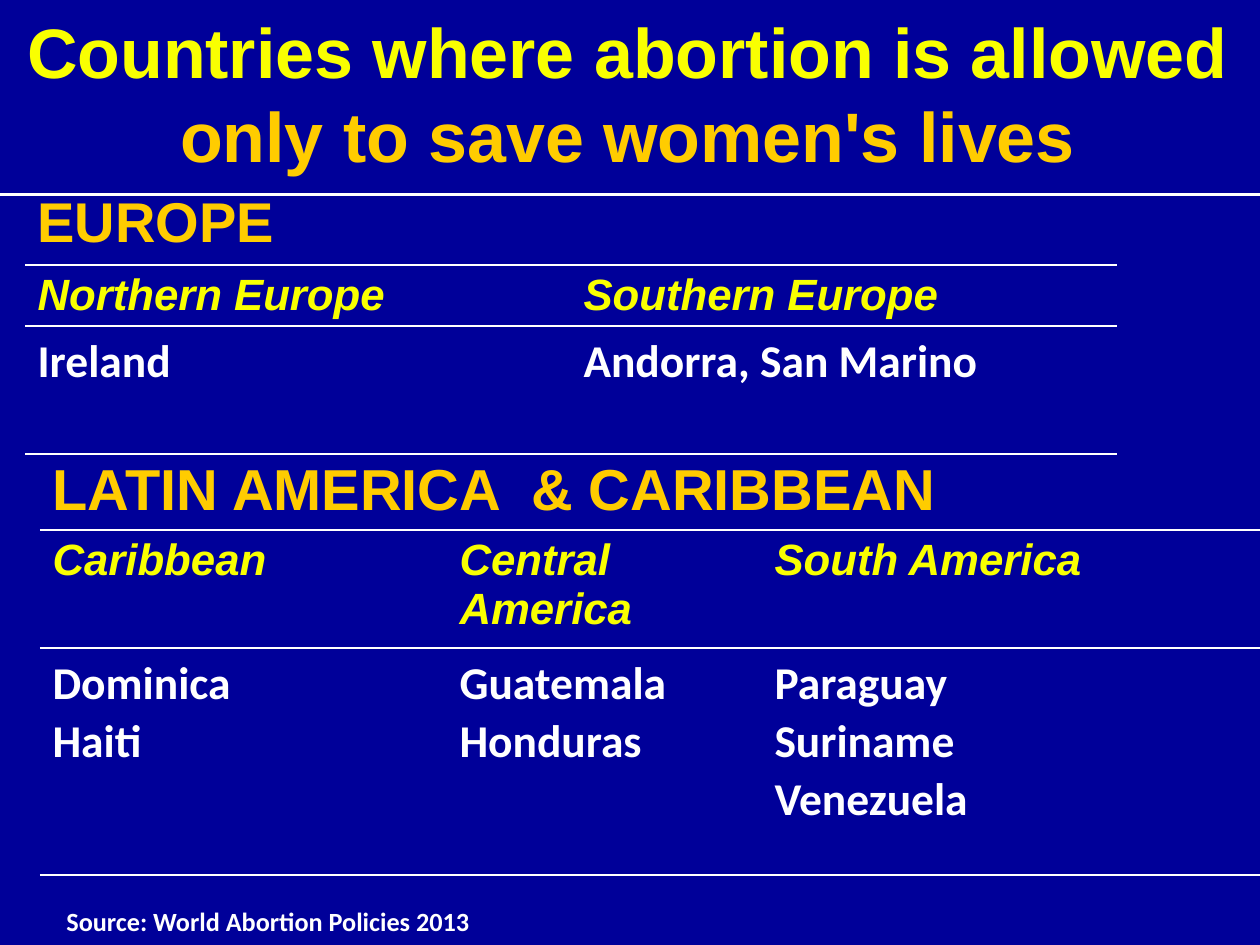
from dataclasses import dataclass

from lxml import etree
from pptx import Presentation
from pptx.dml.color import RGBColor
from pptx.enum.shapes import MSO_CONNECTOR
from pptx.enum.text import PP_ALIGN
from pptx.oxml.ns import qn
from pptx.util import Emu, Pt

PX = 914400 // 126
CENTER = PP_ALIGN.CENTER
STRAIGHT = MSO_CONNECTOR.STRAIGHT


@dataclass(frozen=True)
class Theme:
    navy: str = "000099"
    white: str = "FFFFFF"
    yellow: str = "F9FF01"
    gold: str = "FFCC00"
    heading_font: str = "Arial"
    body_font: str = "Calibri"
    title_size: int = 40
    region_size: int = 25
    country_size: int = 26
    source_size: int = 15
    country_leading: int = 33
    title_leading: int = 48
    border: float = 1.5
    rule: float = 1.75


THEME = Theme()
TITLE = [("Countries where abortion is allowed ", THEME.yellow),
         ("only to save women's lives", THEME.gold)]
SOURCE = "Source: World Abortion Policies 2013"
CONTINENTS = [
    {"name": "LATIN AMERICA  & CARIBBEAN", "size": 33,
     "left": 40, "top": 452, "columns": [407, 315, 498], "rows": [78, 118, 227],
     "regions": {"Caribbean": ["Dominica", "Haiti"],
                 "Central America": ["Guatemala", "Honduras"],
                 "South America": ["Paraguay", "Suriname", "Venezuela"]}},
    {"name": "EUROPE", "size": 32,
     "left": 25, "top": 185, "columns": [546, 546], "rows": [80, 61, 128],
     "regions": {"Northern Europe": ["Ireland"],
                 "Southern Europe": ["Andorra, San Marino"]}},
]


def px(*lengths):
    return [Emu(length * PX) for length in lengths]


def style(font, name, size, color, italic=False):
    font.name, font.size = name, Pt(size)
    font.bold, font.italic = True, italic
    font.color.rgb = RGBColor.from_string(color)


def set_borders(cell, ruled_sides):
    """Rule the named sides of a cell and clear the others."""
    properties = cell._tc.get_or_add_tcPr()
    for index, side in enumerate("LRTB"):
        line = etree.Element(qn(f"a:ln{side}"), w=str(Pt(THEME.border)))
        if side in ruled_sides:
            fill = etree.SubElement(line, qn("a:solidFill"))
            etree.SubElement(fill, qn("a:srgbClr"), val=THEME.white)
        else:
            etree.SubElement(line, qn("a:noFill"))
        properties.insert(index, line)


def fill_cell(cell, lines, font, leading=None):
    cell.text = "\n".join(lines)
    for para in cell.text_frame.paragraphs:
        style(para.font, *font)
        if leading:
            para.line_spacing = Pt(leading)


def add_continent(page, continent):
    columns, rows = continent["columns"], continent["rows"]
    frame = page.shapes.add_table(
        len(rows), len(columns),
        *px(continent["left"], continent["top"], sum(columns), sum(rows)))
    table = frame.table
    table.first_row = table.horz_banding = False
    for column, width in zip(table.columns, columns):
        column.width = Emu(width * PX)
    for index, (row, height) in enumerate(zip(table.rows, rows)):
        row.height = Emu(height * PX)
        for cell in row.cells:
            cell.fill.background()
            cell.margin_bottom = 0
            set_borders(cell, "TB" if index else "B")

    header = table.cell(0, 0)
    header.merge(table.cell(0, len(columns) - 1))
    fill_cell(header, [continent["name"]],
              (THEME.heading_font, continent["size"], THEME.gold))
    for index, (region, countries) in enumerate(continent["regions"].items()):
        fill_cell(table.cell(1, index), [region],
                  (THEME.heading_font, THEME.region_size, THEME.yellow, True))
        fill_cell(table.cell(2, index), countries,
                  (THEME.body_font, THEME.country_size, THEME.white),
                  THEME.country_leading)


def add_text(page, bounds):
    """Add a wrapping text box and return its first paragraph."""
    box = page.shapes.add_textbox(*px(*bounds))
    box.text_frame.word_wrap = True
    return box.text_frame.paragraphs[0]


def add_rule(page, y):
    rule = page.shapes.add_connector(STRAIGHT, *px(0, y, 1260, y))
    rule.line.color.rgb = RGBColor.from_string(THEME.white)
    rule.line.width = Pt(THEME.rule)
    etree.SubElement(rule._element.spPr, qn("a:effectLst"))


def main():
    deck = Presentation()
    deck.slide_width, deck.slide_height = px(1260, 945)
    page = deck.slides.add_slide(deck.slide_layouts[6])
    page.background.fill.solid()
    page.background.fill.fore_color.rgb = RGBColor.from_string(THEME.navy)

    for continent in CONTINENTS:
        add_continent(page, continent)

    title = add_text(page, (0, 2, 1255, 180))
    title.alignment = CENTER
    title.line_spacing = Pt(THEME.title_leading)
    for text, color in TITLE:
        span = title.add_run()
        span.text = text
        style(span.font, THEME.heading_font, THEME.title_size, color)

    source = add_text(page, (54, 899, 556, 44))
    source.text = SOURCE
    style(source.font, THEME.body_font, THEME.source_size, THEME.white)

    add_rule(page, 195)
    deck.save("out.pptx")


if __name__ == "__main__":
    main()
